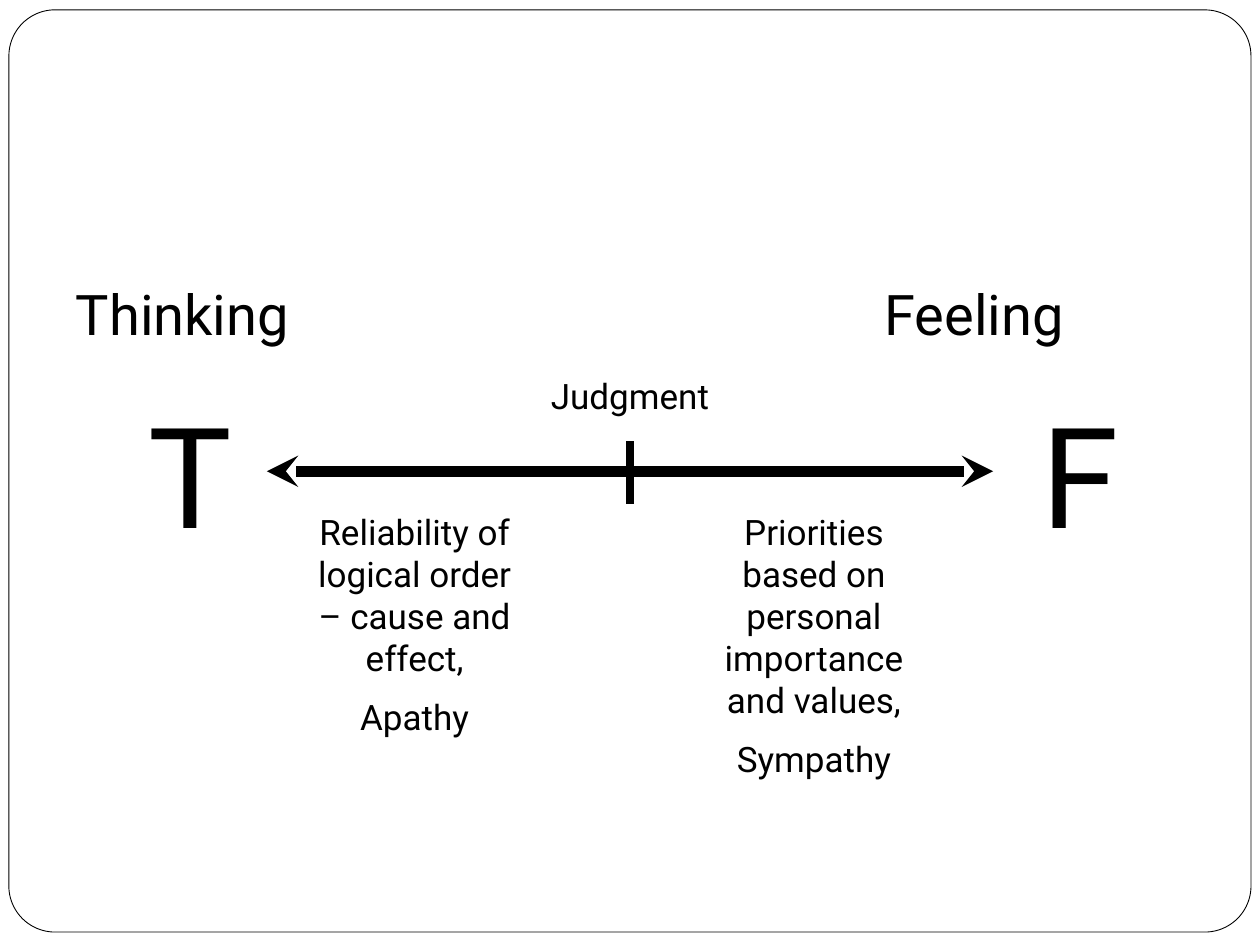
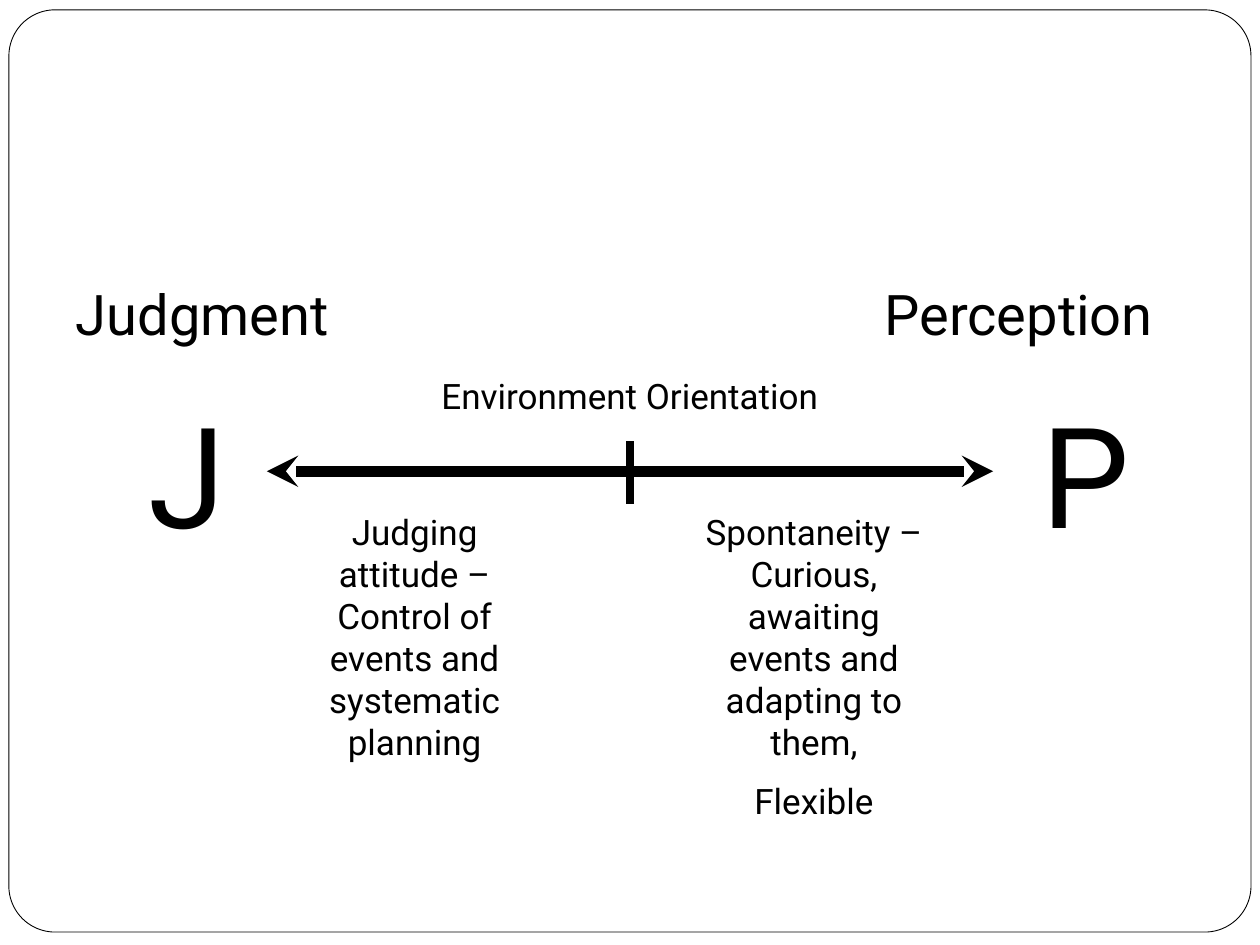
from dataclasses import dataclass

from lxml import etree
from pptx import Presentation
from pptx.dml.color import RGBColor
from pptx.enum.shapes import MSO_CONNECTOR, MSO_SHAPE
from pptx.enum.text import MSO_AUTO_SIZE, PP_ALIGN
from pptx.oxml.ns import qn
from pptx.util import Cm, Pt

LEFT, CENTER = PP_ALIGN.LEFT, PP_ALIGN.CENTER
STRAIGHT = MSO_CONNECTOR.STRAIGHT
ROUNDED = MSO_SHAPE.ROUNDED_RECTANGLE
FIT_SHAPE = MSO_AUTO_SIZE.SHAPE_TO_FIT_TEXT

# Each pole: name, letter, description paragraphs, description height in cm
SCALES = [
    {
        "axis": "Judgment",
        "poles": [
            ("Thinking", "T",
             ["Reliability of logical order – cause and effect,", "Apathy"], 4.9),
            ("Feeling", "F",
             ["Priorities based on personal importance and values,", "Sympathy"], 5.77),
        ],
    },
    {
        "axis": "Environment Orientation",
        "poles": [
            ("Judgment", "J",
             ["Judging attitude – Control of events and systematic planning"], 5.33),
            ("Perception", "P",
             ["Spontaneity – Curious, awaiting events and adapting to them,", "Flexible"], 6.6),
        ],
    },
]


@dataclass(frozen=True)
class Theme:
    font: str = "Roboto"
    ink: RGBColor = RGBColor(0, 0, 0)
    paper: RGBColor = RGBColor(255, 255, 255)
    name_size: int = 32
    letter_size: int = 80
    body_size: int = 20
    frame_line: float = 0.5
    axis_line: float = 6
    tick_line: float = 4.5


THEME = Theme()

# Lengths in cm
WIDTH, HEIGHT = 25.4, 19.05
MIDDLE = WIDTH / 2
AXIS_Y, AXIS_HALF = 9.5, 7.32
TICK_TOP, TICK_BOTTOM = 8.89, 10.16
AXIS_LABEL_WIDTH = 11.12
NAME_LEFTS = (1.28, 17.58)
LETTER_LEFTS = (2.74, 20.75)
DESCRIPTION_LEFTS = (5.92, 13.97)


def add_text(page, paragraphs, left, top, width, height, *, size, align=LEFT):
    box = page.shapes.add_textbox(Cm(left), Cm(top), Cm(width), Cm(height))
    frame = box.text_frame
    frame.word_wrap = True
    frame.auto_size = FIT_SHAPE
    for index, text in enumerate(paragraphs):
        para = frame.add_paragraph() if index else frame.paragraphs[0]
        para.alignment = align
        if index:
            para.space_before = Pt(size / 2)
        span = para.add_run()
        span.text = text
        span.font.name = THEME.font
        span.font.size = Pt(size)
        span.font.color.rgb = THEME.ink


def add_line(page, start, end, weight, arrows=False):
    line = page.shapes.add_connector(STRAIGHT, *(Cm(value) for value in start + end))
    line.line.color.rgb = THEME.ink
    line.line.width = Pt(weight)
    if arrows:
        outline = line.line._get_or_add_ln()
        for tag in ("a:headEnd", "a:tailEnd"):
            etree.SubElement(outline, qn(tag), type="stealth")
    etree.SubElement(line._element.spPr, qn("a:effectLst"))


def add_frame(page):
    frame = page.shapes.add_shape(ROUNDED, Cm(0.18), Cm(0.2), Cm(25.04), Cm(18.59))
    frame.adjustments[0] = 0.05
    frame.shadow.inherit = False
    frame.fill.solid()
    frame.fill.fore_color.rgb = THEME.paper
    frame.line.color.rgb = THEME.ink
    frame.line.width = Pt(THEME.frame_line)


def add_scale(page, scale):
    """Draw the two-way axis with its label and the two poles."""
    add_line(page, (MIDDLE - AXIS_HALF, AXIS_Y), (MIDDLE + AXIS_HALF, AXIS_Y),
             THEME.axis_line, arrows=True)
    add_line(page, (MIDDLE, TICK_TOP), (MIDDLE, TICK_BOTTOM), THEME.tick_line)
    add_text(page, [scale["axis"]], MIDDLE - AXIS_LABEL_WIDTH / 2, 7.42,
             AXIS_LABEL_WIDTH, 1.09, size=THEME.body_size, align=CENTER)
    for side, (name, letter, description, depth) in enumerate(scale["poles"]):
        add_text(page, [name], NAME_LEFTS[side], 5.52, 7.82, 1.6,
                 size=THEME.name_size)
        add_text(page, [letter], LETTER_LEFTS[side], 7.7, 4.24, 3.63,
                 size=THEME.letter_size)
        add_text(page, description, DESCRIPTION_LEFTS[side], TICK_BOTTOM, 4.88, depth,
                 size=THEME.body_size, align=CENTER)


def main():
    deck = Presentation()
    deck.slide_width, deck.slide_height = Cm(WIDTH), Cm(HEIGHT)
    blank = deck.slide_layouts[6]
    for scale in SCALES:
        page = deck.slides.add_slide(blank)
        add_frame(page)
        add_scale(page, scale)
    deck.save("out.pptx")


if __name__ == "__main__":
    main()
